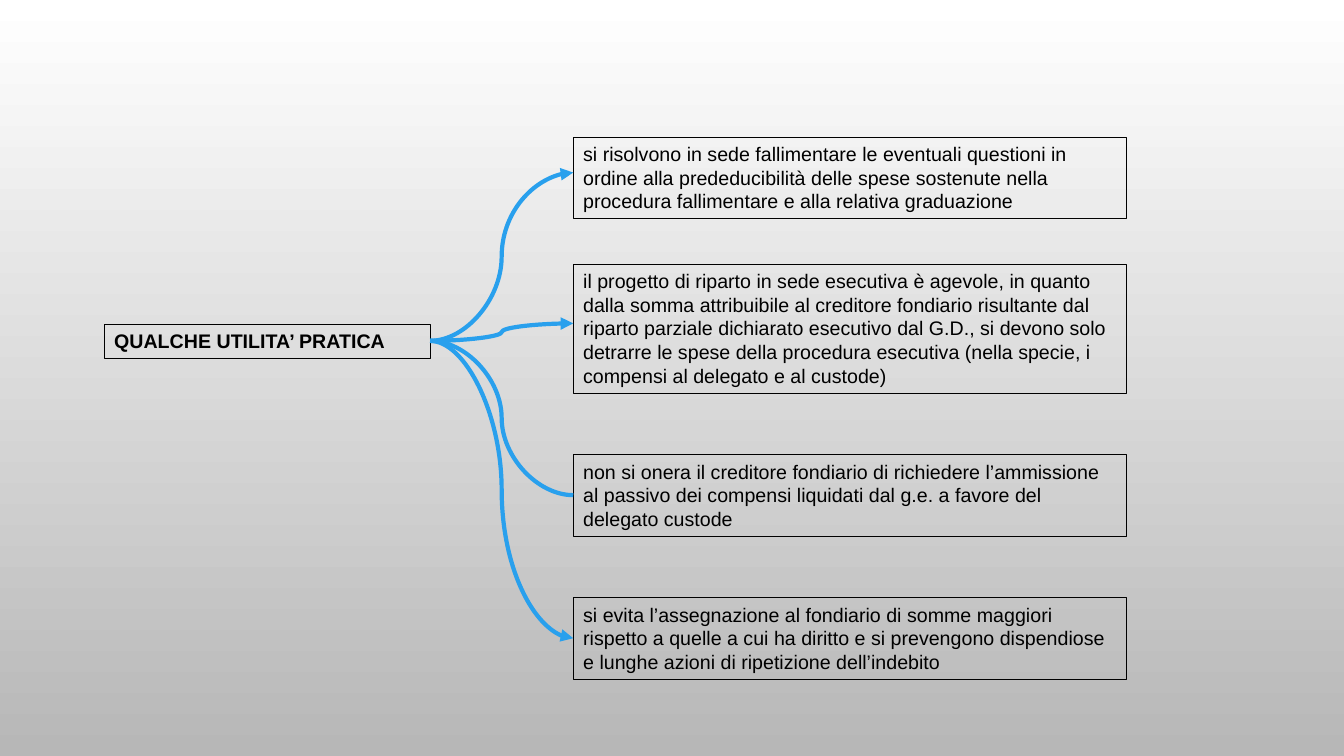
from pptx import Presentation
from pptx.dml.color import RGBColor
from pptx.enum.shapes import MSO_CONNECTOR
from pptx.enum.text import MSO_AUTO_SIZE
from pptx.oxml.ns import qn
from pptx.util import Pt
from lxml.etree import SubElement

BLACK = RGBColor(0x00, 0x00, 0x00)
WHITE = RGBColor(0xFF, 0xFF, 0xFF)
GREY = RGBColor(0xB7, 0xB7, 0xB7)
BLUE = RGBColor(0x29, 0xA0, 0xED)

deck = Presentation()
deck.slide_width, deck.slide_height = Pt(960), Pt(540)
slide = deck.slides.add_slide(deck.slide_layouts[6])

# Background: white at the top, grey at the bottom
fill = slide.background.fill
fill.gradient()
fill.gradient_angle = 270
for stop, color in zip(fill.gradient_stops, (WHITE, GREY)):
    stop.color.rgb = color


def add_box(left, top, width, height, text, bold=None):
    box = slide.shapes.add_textbox(Pt(left), Pt(top), Pt(width), Pt(height))
    box.line.color.rgb = BLACK
    box.line.width = Pt(0.25)
    frame = box.text_frame
    frame.word_wrap = True
    frame.auto_size = MSO_AUTO_SIZE.SHAPE_TO_FIT_TEXT
    run = frame.paragraphs[0].add_run()
    run.text = text
    run.font.name = "Arial"
    run.font.size = Pt(14)
    run.font.bold = bold
    run.font.color.rgb = BLACK


def add_curve(x1, y1, x2, y2, arrow):
    curve = slide.shapes.add_connector(
        MSO_CONNECTOR.CURVE, Pt(x1), Pt(y1), Pt(x2), Pt(y2))
    curve.line.color.rgb = BLUE
    curve.line.width = Pt(3)
    if arrow:
        SubElement(curve.line._get_or_add_ln(), qn("a:tailEnd"), type="triangle")
    SubElement(curve._element.spPr, qn("a:effectLst"))


# Topic on the left
add_box(74.4, 231.3, 232.8, 24.5, "QUALCHE UTILITA’ PRATICA", True)

# Benefits on the right: top, height, curve end, arrowhead, text
BENEFITS = [
    (98, 58.2, 123.3, True,
     "si risolvono in sede fallimentare le eventuali questioni in ordine alla "
     "prededucibilità delle spese sostenute nella procedura fallimentare e "
     "alla relativa graduazione"),
    (188.8, 92.2, 231, True,
     "il progetto di riparto in sede esecutiva è agevole, in quanto dalla somma "
     "attribuibile al creditore fondiario risultante dal riparto parziale "
     "dichiarato esecutivo dal G.D., si devono solo detrarre le spese della "
     "procedura esecutiva (nella specie, i compensi al delegato e al custode)"),
    (324.7, 58.2, 353.7, False,
     "non si onera il creditore fondiario di richiedere l’ammissione al passivo "
     "dei compensi liquidati dal g.e. a favore del delegato custode"),
    (426.9, 58.2, 455.9, True,
     "si evita l’assegnazione al fondiario di somme maggiori rispetto a quelle a "
     "cui ha diritto e si prevengono dispendiose e lunghe azioni di ripetizione "
     "dell’indebito"),
]
for top, height, end, arrow, text in BENEFITS:
    add_box(409.5, top, 394.8, height, text)

# Curves from the topic to each benefit
for top, height, end, arrow, text in BENEFITS:
    add_curve(307.2, 243.5, 409.5, end, arrow)

deck.save("out.pptx")
